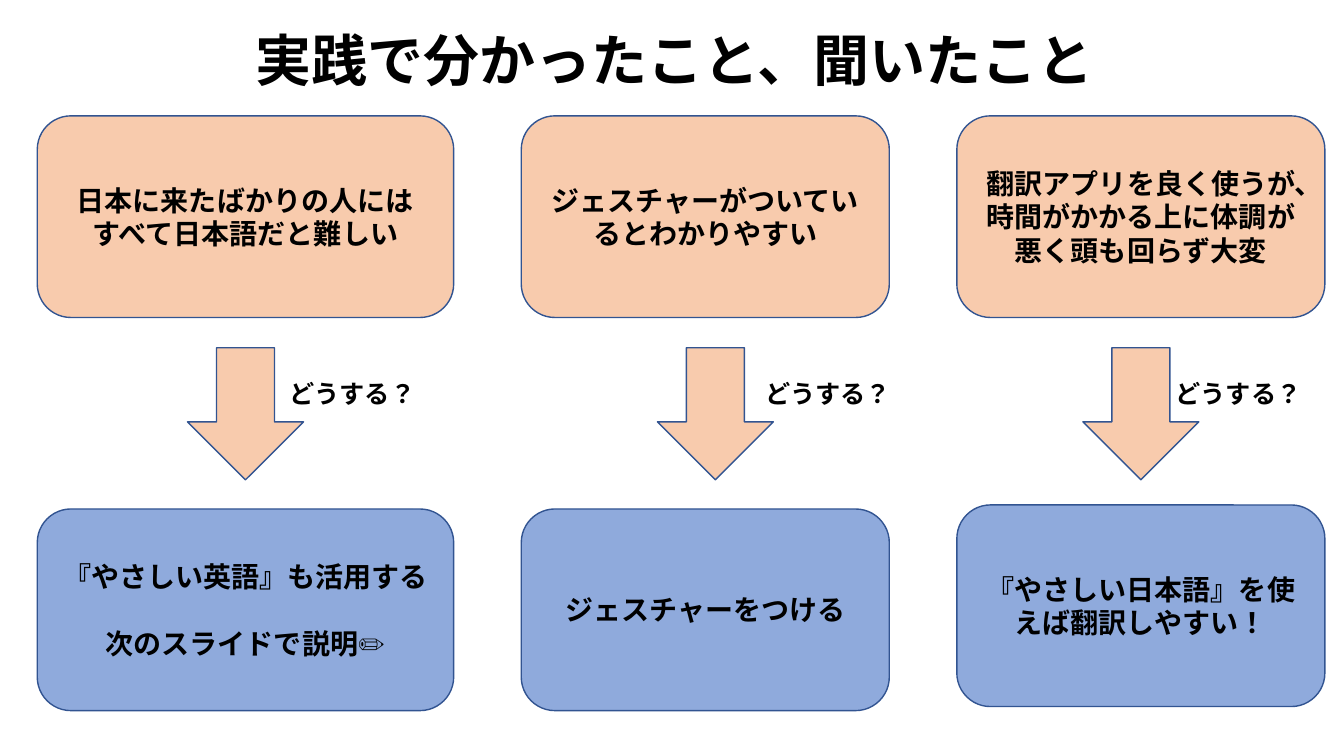
from dataclasses import dataclass

from lxml.etree import SubElement
from pptx import Presentation
from pptx.dml.color import RGBColor
from pptx.enum.lang import MSO_LANGUAGE_ID
from pptx.enum.shapes import MSO_SHAPE
from pptx.enum.text import MSO_ANCHOR, PP_ALIGN
from pptx.oxml.ns import qn
from pptx.util import Inches, Pt


@dataclass(frozen=True)
class Theme:
    font: str = "Noto Sans CJK JP"
    text: RGBColor = RGBColor(0x00, 0x00, 0x00)
    finding: RGBColor = RGBColor(0xF8, 0xCB, 0xAD)
    answer: RGBColor = RGBColor(0x8F, 0xAA, 0xDC)
    outline: RGBColor = RGBColor(0x32, 0x54, 0x91)
    outline_width: int = 1
    title_size: int = 40
    body_size: int = 20
    label_size: int = 18


@dataclass(frozen=True)
class Box:
    left: float
    top: float
    width: float
    height: float

    def lengths(self):
        return [Inches(value) for value in (self.left, self.top, self.width, self.height)]


@dataclass(frozen=True)
class Column:
    left: float
    width: float
    finding: tuple
    answer: tuple
    arrow_shift: float = 0
    label_offset: float = 0.91
    answer_top: float = 3.9
    answer_gap: int = 0


THEME = Theme()
COLUMN_TOP = 1.15
COLUMN_HEIGHT = 5.9
CARD_HEIGHT = 2
ARROW_TOP = 2.3
ARROW_WIDTH = 1.15
ARROW_HEIGHT = 1.31
LABEL_TOP = 2.55

COLUMNS = (
    Column(0.37, 4.13, ("日本に来たばかりの人には", "すべて日本語だと難しい"),
           ("『やさしい英語』も活用する", "次のスライドで説明✏️"), answer_gap=24),
    Column(5.17, 3.65, ("ジェスチャーがついているとわかりやすい",),
           ("ジェスチャーをつける",), arrow_shift=0.1, label_offset=0.97),
    Column(9.49, 3.65, ("翻訳アプリを良く使うが、時間がかかる上に体調が悪く頭も回らず大変",),
           ("『やさしい日本語』を使えば翻訳しやすい！",), label_offset=0.82, answer_top=3.86),
)


def write_text(text_frame, lines, size, alignment, anchor, gap=0, line_spacing=1.0):
    text_frame.word_wrap = True
    text_frame.vertical_anchor = anchor
    for index, line in enumerate(lines):
        paragraph = text_frame.add_paragraph() if index else text_frame.paragraphs[0]
        paragraph.alignment = alignment
        paragraph.line_spacing = line_spacing
        paragraph.space_before = Pt(gap if index else 0)
        run = paragraph.add_run()
        run.text = line
        run.font.size = Pt(size)
        run.font.bold = True
        run.font.color.rgb = THEME.text
        run.font.name = THEME.font
        run.font.language_id = MSO_LANGUAGE_ID.JAPANESE
        SubElement(run.font._element, qn("a:ea"), typeface=THEME.font)


def add_filled_shape(slide, kind, box, fill):
    shape = slide.shapes.add_shape(kind, *box.lengths())
    shape.shadow.inherit = False
    shape.fill.solid()
    shape.fill.fore_color.rgb = fill
    shape.line.color.rgb = THEME.outline
    shape.line.width = Pt(THEME.outline_width)
    return shape


def add_card(slide, box, fill, lines, gap=0):
    shape = add_filled_shape(slide, MSO_SHAPE.ROUNDED_RECTANGLE, box, fill)
    write_text(shape.text_frame, lines, THEME.body_size, PP_ALIGN.CENTER,
               MSO_ANCHOR.MIDDLE, gap)


def add_title(slide, box):
    text_box = slide.shapes.add_textbox(*box.lengths())
    write_text(text_box.text_frame, ("実践で分かったこと、聞いたこと",), THEME.title_size,
               PP_ALIGN.LEFT, MSO_ANCHOR.MIDDLE, line_spacing=0.9)


def add_question_arrow(slide, box, label_offset):
    add_filled_shape(slide, MSO_SHAPE.DOWN_ARROW, box, THEME.finding)
    label_box = Box(box.left + label_offset, box.top + LABEL_TOP - ARROW_TOP, 1.7, 0.4)
    label = slide.shapes.add_textbox(*label_box.lengths())
    write_text(label.text_frame, ("どうする？",), THEME.label_size, PP_ALIGN.LEFT, MSO_ANCHOR.TOP)


def add_column(slide, box, column):
    finding_box = Box(box.left, box.top, box.width, CARD_HEIGHT)
    add_card(slide, finding_box, THEME.finding, column.finding)
    arrow_left = box.left + (box.width - ARROW_WIDTH) / 2 + column.arrow_shift
    arrow_box = Box(arrow_left, box.top + ARROW_TOP, ARROW_WIDTH, ARROW_HEIGHT)
    add_question_arrow(slide, arrow_box, column.label_offset)
    answer_box = Box(box.left, box.top + column.answer_top, box.width, CARD_HEIGHT)
    add_card(slide, answer_box, THEME.answer, column.answer, column.answer_gap)


def main():
    presentation = Presentation()
    presentation.slide_width = Inches(13.33)
    presentation.slide_height = Inches(7.5)
    slide = presentation.slides.add_slide(presentation.slide_layouts[6])
    add_title(slide, Box(2.44, 0, 10.8, 1.25))
    for column in COLUMNS:
        add_column(slide, Box(column.left, COLUMN_TOP, column.width, COLUMN_HEIGHT), column)
    presentation.save("out.pptx")


if __name__ == "__main__":
    main()
